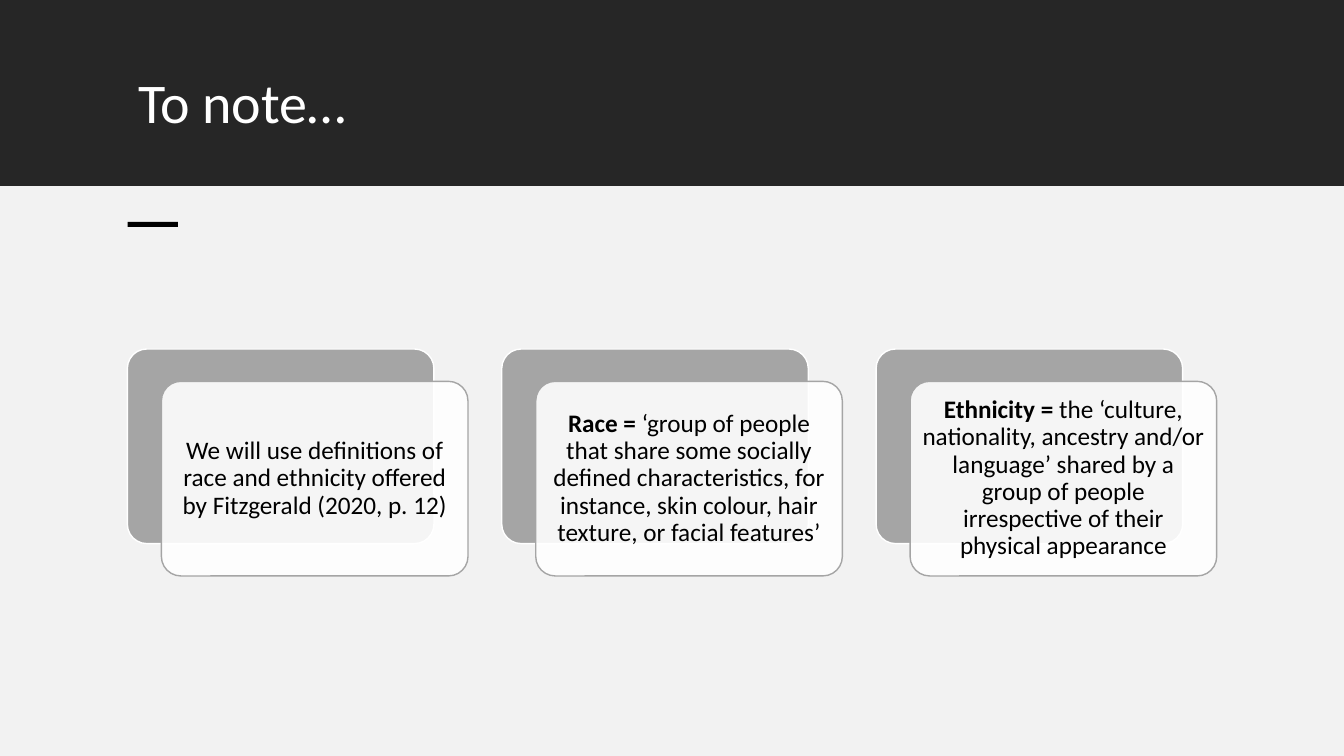
from dataclasses import dataclass

from lxml.etree import SubElement
from pptx import Presentation
from pptx.dml.color import RGBColor as RGB
from pptx.enum.shapes import MSO_SHAPE as Shape
from pptx.enum.text import MSO_ANCHOR as Anchor, PP_ALIGN as Align
from pptx.oxml.ns import qn
from pptx.util import Pt


@dataclass(frozen=True)
class Theme:
    font: str = "Calibri"
    head: int = 40
    body: int = 18
    dark: RGB = RGB(0x26, 0x26, 0x26)
    pale: RGB = RGB(0xF2, 0xF2, 0xF2)
    grey: RGB = RGB(0xA5, 0xA5, 0xA5)
    white: RGB = RGB(0xFF, 0xFF, 0xFF)
    black: RGB = RGB(0, 0, 0)


THEME = Theme()
WIDTH, HEIGHT = 960, 540
SPLIT = 133  # where the title band meets the body

# Each card is a list of (text, bold) runs
CARDS = [
    [("We will use definitions of race and ethnicity offered by "
      "Fitzgerald (2020, p. 12)", False)],
    [("Race = ", True),
     ("‘group of people that share some socially defined characteristics, "
      "for instance, skin colour, hair texture, or facial features’", False)],
    [("Ethnicity = ", True),
     ("the ‘culture, nationality, ancestry and/or language’ shared by a group "
      "of people irrespective of their physical appearance", False)],
]
LEFT, TOP, STEP = 91, 249.3, 267.4
CARD_W, CARD_H = 219, 139
SHIFT_X, SHIFT_Y = 24.3, 23.1


def add_box(slide, kind, x, y, w, h, fill, line=None):
    box = slide.shapes.add_shape(kind, Pt(x), Pt(y), Pt(w), Pt(h))
    box.shadow.inherit = False
    box.fill.solid()
    box.fill.fore_color.rgb = fill
    if line is None:
        box.line.fill.background()
    else:
        box.line.color.rgb = line
        box.line.width = Pt(1)
    return box


def add_round(slide, x, y, fill, line):
    box = add_box(slide, Shape.ROUNDED_RECTANGLE, x, y, CARD_W, CARD_H, fill, line)
    box.adjustments[0] = 0.1
    return box


def set_alpha(box, percent):
    color = box.element.spPr.find(qn("a:solidFill"))[0]
    SubElement(color, qn("a:alpha"), val=str(percent * 1000))


def add_run(para, text, size, color, bold=False):
    run = para.add_run()
    run.text = text
    font = run.font
    font.name, font.size, font.bold = THEME.font, Pt(size), bold
    font.color.rgb = color


def add_card(slide, x, runs):
    # Grey plate behind, translucent card in front
    add_round(slide, x, TOP, THEME.grey, THEME.white)
    card = add_round(slide, x + SHIFT_X, TOP + SHIFT_Y, THEME.white, THEME.grey)
    set_alpha(card, 89)
    frame = card.text_frame
    frame.word_wrap = True
    frame.vertical_anchor = Anchor.MIDDLE
    frame.margin_left = frame.margin_right = Pt(4.5)
    frame.margin_top = frame.margin_bottom = Pt(4.5)
    para = frame.paragraphs[0]
    para.alignment = Align.CENTER
    para.line_spacing = 0.9
    for text, bold in runs:
        add_run(para, text, THEME.body, THEME.black, bold)


def set_title(slide, text):
    title = slide.shapes.title
    title.left, title.top = Pt(91.4), Pt(50.4)
    title.width, title.height = Pt(778), Pt(70.6)
    frame = title.text_frame
    frame.word_wrap = True
    frame.vertical_anchor = Anchor.TOP
    para = frame.paragraphs[0]
    para.alignment = Align.LEFT
    para.line_spacing = 0.9
    add_run(para, text, THEME.head, THEME.white)
    return title


def main():
    deck = Presentation()
    deck.slide_width, deck.slide_height = Pt(WIDTH), Pt(HEIGHT)
    slide = deck.slides.add_slide(deck.slide_layouts[5])

    # Title on its dark band
    title = set_title(slide, "To note…")
    band = add_box(slide, Shape.RECTANGLE, 0, 0, WIDTH, SPLIT, THEME.dark)
    title.element.addprevious(band.element)

    # Body panel and accent bar
    add_box(slide, Shape.RECTANGLE, 0, SPLIT, WIDTH, HEIGHT - SPLIT, THEME.pale)
    add_box(slide, Shape.RECTANGLE, 91.2, 158.4, 36, 3.6, THEME.black)

    # Row of cards
    for i, runs in enumerate(CARDS):
        add_card(slide, LEFT + i * STEP, runs)

    deck.save("out.pptx")


if __name__ == "__main__":
    main()
